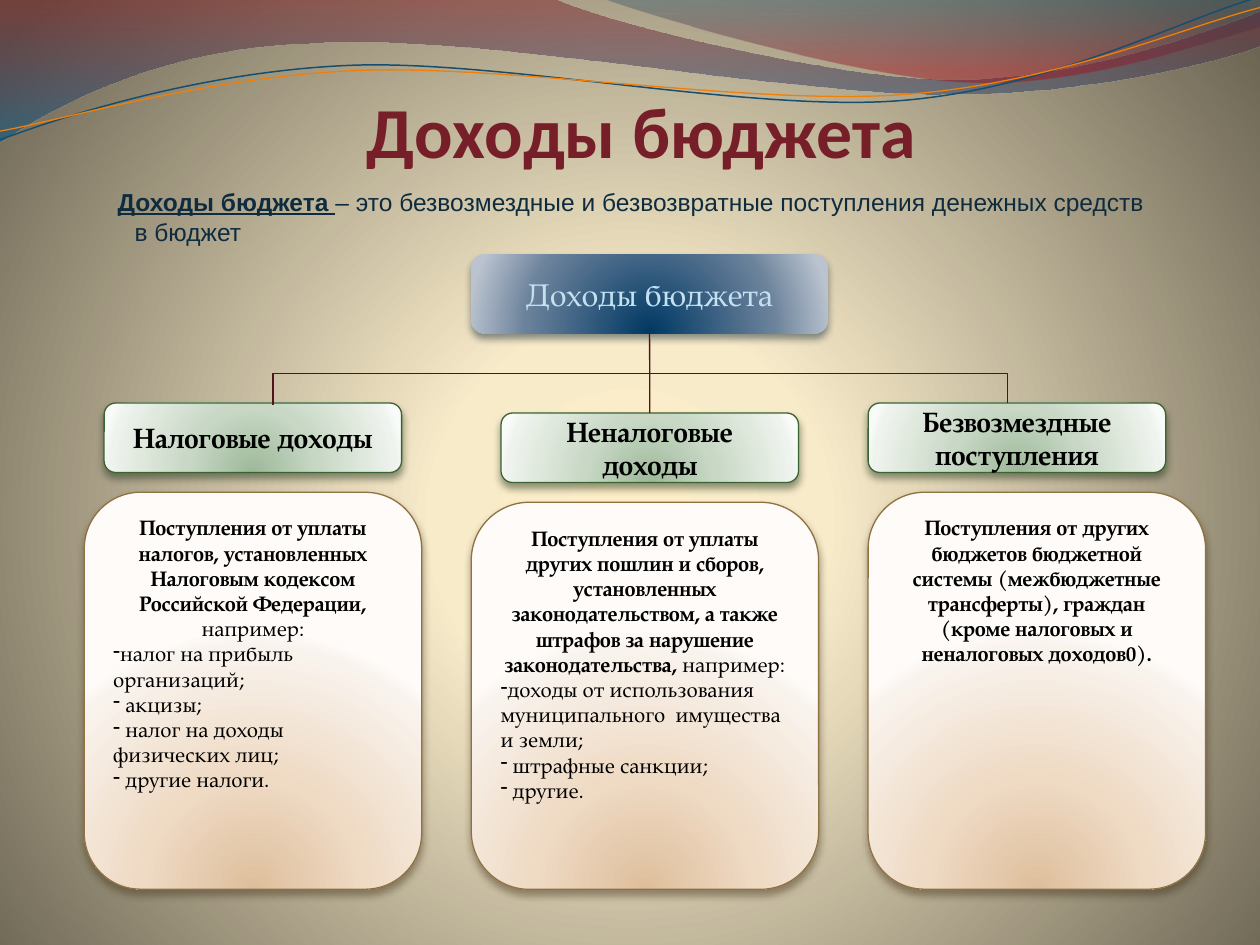
from lxml.etree import SubElement
from pptx import Presentation
from pptx.dml.color import RGBColor
from pptx.enum.shapes import MSO_CONNECTOR as CONN, MSO_SHAPE as SHAPE
from pptx.enum.text import MSO_ANCHOR as ANCHOR, PP_ALIGN as ALIGN
from pptx.oxml.ns import qn
from pptx.util import Pt

rgb = RGBColor.from_string
SERIF = "TeX Gyre Pagella"


def add_text(p, text, size=12, font=SERIF, color="000000", bold=False, underline=False):
    r = p.add_run()
    r.text = text
    r.font.size, r.font.name = Pt(size), font
    r.font.bold, r.font.underline = bold, underline
    r.font.color.rgb = rgb(color)


def set_gradient(fill, el, stops, center=None):
    fill.gradient()
    grad = el.find(".//" + qn("a:gradFill"))
    for child in list(grad):
        grad.remove(child)
    gs_lst = SubElement(grad, qn("a:gsLst"))
    for pos, color, alpha in stops:
        gs = SubElement(gs_lst, qn("a:gs"), pos=str(pos * 1000))
        clr = SubElement(gs, qn("a:srgbClr"), val=color)
        if alpha < 100:
            SubElement(clr, qn("a:alpha"), val=str(alpha * 1000))
    if center:
        path = SubElement(grad, qn("a:path"), path="circle")
        SubElement(path, qn("a:fillToRect"),
                   {k: str(v * 1000) for k, v in zip("ltrb", center)})
    else:
        SubElement(grad, qn("a:lin"), ang="5400000", scaled="0")


prs = Presentation()
prs.slide_width, prs.slide_height = Pt(720), Pt(540)
s = prs.slides.add_slide(prs.slide_layouts[6])
set_gradient(s.background.fill, s.background._cSld,
             [(0, "FEEEC7", 100), (25, "F8EBCA", 100), (100, "6C6553", 100)],
             (10, 110, 10, 100))

waves = [
    ([(0, 0), (316.8, -0.7), (342.7, 12.2, 478.1, 45.4, 545.8, 45.4),
      (614.2, 45.4, 689.8, 18.7, 720, 6.5), (720.7, 25.9),
      (707.8, 31.7, 626.4, 54.7, 537.1, 54), (447.8, 54, 275, 20.2, 185, 24.5),
      (92.9, 25.9, 33.1, 59.8, -0.7, 81.4)],
     [(0, "7E1621", 45), (100, "005689", 55)], None, 0),
    ([(344.9, -0.7), (366.5, 7.9, 491, 44.6, 553.7, 46.8),
      (616.3, 49.7, 691.9, 23, 720, 15.1), (720, 0)],
     [(0, "094467", 30), (80, "A10F1F", 45)], None, 0),
    ([(0, 79.9), (34.6, 67, 113.8, 41, 199.4, 37.4),
      (284.4, 33.8, 427, 64.1, 513.4, 57.6), (599.8, 51.1, 675.4, 10.8, 718.6, -1.4)],
     None, "184E6D", 0.85),
    ([(0, 74.9), (33.8, 69.1, 118.1, 43.9, 203.8, 40.3),
      (290.2, 36.7, 430.6, 60.5, 516.2, 54), (601.9, 48.2, 677.5, 15.1, 720, 4.3)],
     None, "F07F09", 0.75),
]
for segments, stops, line, width in waves:
    pts = [(x * 10, y * 10) for seg in segments for x, y in zip(seg[::2], seg[1::2])]
    fb = s.shapes.build_freeform(*pts[0], scale=Pt(1) / 10)
    fb.add_line_segments(pts[1:], close=stops is not None)
    sp = fb.convert_to_shape()
    nodes = iter(list(sp._element.iter(qn("a:lnTo"))))
    for seg in segments[1:]:
        node = next(nodes)
        if len(seg) == 6:
            curve = node.getparent().makeelement(qn("a:cubicBezTo"))
            node.addprevious(curve)
            for n in (node, next(nodes), next(nodes)):
                curve.append(n[0])
                n.getparent().remove(n)
    sp.shadow.inherit = False
    if stops:
        set_gradient(sp.fill, sp._element, stops)
        sp.line.fill.background()
    else:
        sp.fill.background()
        sp.line.color.rgb, sp.line.width = rgb(line), Pt(width)

sp = s.shapes.add_textbox(Pt(42.5), Pt(0), Pt(648), Pt(98.6))
tf = sp.text_frame
tf.word_wrap, tf.vertical_anchor = True, ANCHOR.BOTTOM
tf.margin_left = tf.margin_right = tf.margin_bottom = 0
p = tf.paragraphs[0]
p.alignment = ALIGN.CENTER
add_text(p, "Доходы бюджета", size=41, font="Calibri", color="771F28", bold=True)

sp = s.shapes.add_textbox(Pt(48.2), Pt(105.8), Pt(618.5), Pt(56.9))
tf = sp.text_frame
tf.word_wrap, tf.margin_top = True, Pt(0.8)
p = tf.paragraphs[0]
p.line_spacing = Pt(17)
pPr = p._p.get_or_add_pPr()
pPr.set("marL", str(Pt(21.6)))
pPr.set("indent", str(Pt(-9.6)))
intro = dict(size=14, font="Arial", color="0E2C3E")
add_text(p, "Доходы бюджета ", bold=True, underline=True, **intro)
add_text(p, "– это безвозмездные и безвозвратные поступления денежных средств в бюджет", **intro)

styles = {
    "root": (["003863", "6B829B", "BAC3CF"], [0, 68, 100], None, "091F2C",
             dict(size=18, color="C4E1F2")),
    "head": (["9EB99A", "C8D8C5", "EEF3ED", "F9FBF9"], [0, 43, 93, 100],
             "396330", "1B2F17", dict(size=16, bold=True)),
    "card": (["DEBF9C", "EFDAC4", "F9F3ED", "FEFBF8"], [0, 43, 93, 100],
             "907141", "45361E", dict(bold=True)),
}
boxes = [
    ("root", 269.3, 145.2, 203.8, 45.4, "Доходы бюджета", "", []),
    ("head", 59.5, 230.3, 170, 39.7, "Налоговые доходы", "", []),
    ("head", 286.3, 236, 170, 39.7, "Неналоговые доходы", "", []),
    ("head", 496.1, 230.3, 170, 39.7, "Безвозмездные поступления", "", []),
    ("card", 269.3, 287, 198.5, 221.2,
     "Поступления от уплаты других пошлин и сборов, установленных законодательством, "
     "а также штрафов за нарушение законодательства, ", "например:",
     ["доходы от использования муниципального  имущества и земли;",
      " штрафные санкции;", " другие."]),
    ("card", 48.2, 281.3, 192.8, 226.8,
     "Поступления от уплаты налогов, установленных Налоговым кодексом "
     "Российской Федерации, ", "например:",
     ["налог на прибыль организаций;", " акцизы;",
      " налог на доходы физических лиц;", " другие налоги."]),
    ("card", 496.1, 281.3, 192.8, 226.8,
     "Поступления от других бюджетов бюджетной системы (межбюджетные трансферты), "
     "граждан (кроме налоговых и неналоговых доходов0).", "", []),
]
shapes = []
for kind, x, y, w, h, lead, tail, items in boxes:
    colors, stops, line, shade, fmt = styles[kind]
    sp = s.shapes.add_shape(SHAPE.ROUNDED_RECTANGLE, Pt(x), Pt(y), Pt(w), Pt(h))
    shapes.append(sp)
    set_gradient(sp.fill, sp._element,
                 [(pos, c, 100) for pos, c in zip(stops, colors)], (50, 130, 50, -30))
    if line:
        sp.line.color.rgb, sp.line.width = rgb(line), Pt(0.75)
    else:
        sp.line.fill.background()
    sp.shadow.inherit = False
    shadow = SubElement(sp._element.spPr.find(qn("a:effectLst")), qn("a:outerShdw"),
                        blurRad=str(Pt(4.5)), dist=str(Pt(3)), dir="5400000", rotWithShape="0")
    clr = SubElement(shadow, qn("a:srgbClr"), val=shade)
    SubElement(clr, qn("a:alpha"), val="48000")
    tf = sp.text_frame
    tf.word_wrap = True
    tf.vertical_anchor = ANCHOR.TOP if kind == "card" else ANCHOR.MIDDLE
    p = tf.paragraphs[0]
    p.alignment = ALIGN.CENTER
    add_text(p, lead, **fmt)
    if tail:
        add_text(p, tail)
    for item in items:
        p = tf.add_paragraph()
        p.alignment = ALIGN.LEFT
        pPr = p._p.get_or_add_pPr()
        SubElement(pPr, qn("a:buFontTx"))
        SubElement(pPr, qn("a:buChar"), char="-")
        add_text(p, item)

left, right, mid_y = 156, 575.5, 230.8
cx, half = (left + right) / 2, (right - left) / 2
elbow = s.shapes.add_connector(CONN.ELBOW, Pt(cx + 0.5), Pt(mid_y + half),
                               Pt(cx - 0.5), Pt(mid_y - half))
elbow._element.spPr.find(qn("a:xfrm")).set("rot", "5400000")
geom = elbow._element.spPr.find(qn("a:prstGeom"))
SubElement(geom.get_or_add_avLst(), qn("a:gd"), name="adj1", fmla="val 1800000")

stem = s.shapes.add_connector(CONN.STRAIGHT, Pt(371.2), Pt(190.6), Pt(371.2), Pt(236))
stem.begin_connect(shapes[0], 2)
stem.end_connect(shapes[2], 0)
for c in (elbow, stem):
    c.line.color.rgb, c.line.width = rgb("50141B"), Pt(0.75)
    SubElement(c._element.spPr, qn("a:effectLst"))

prs.save("out.pptx")
